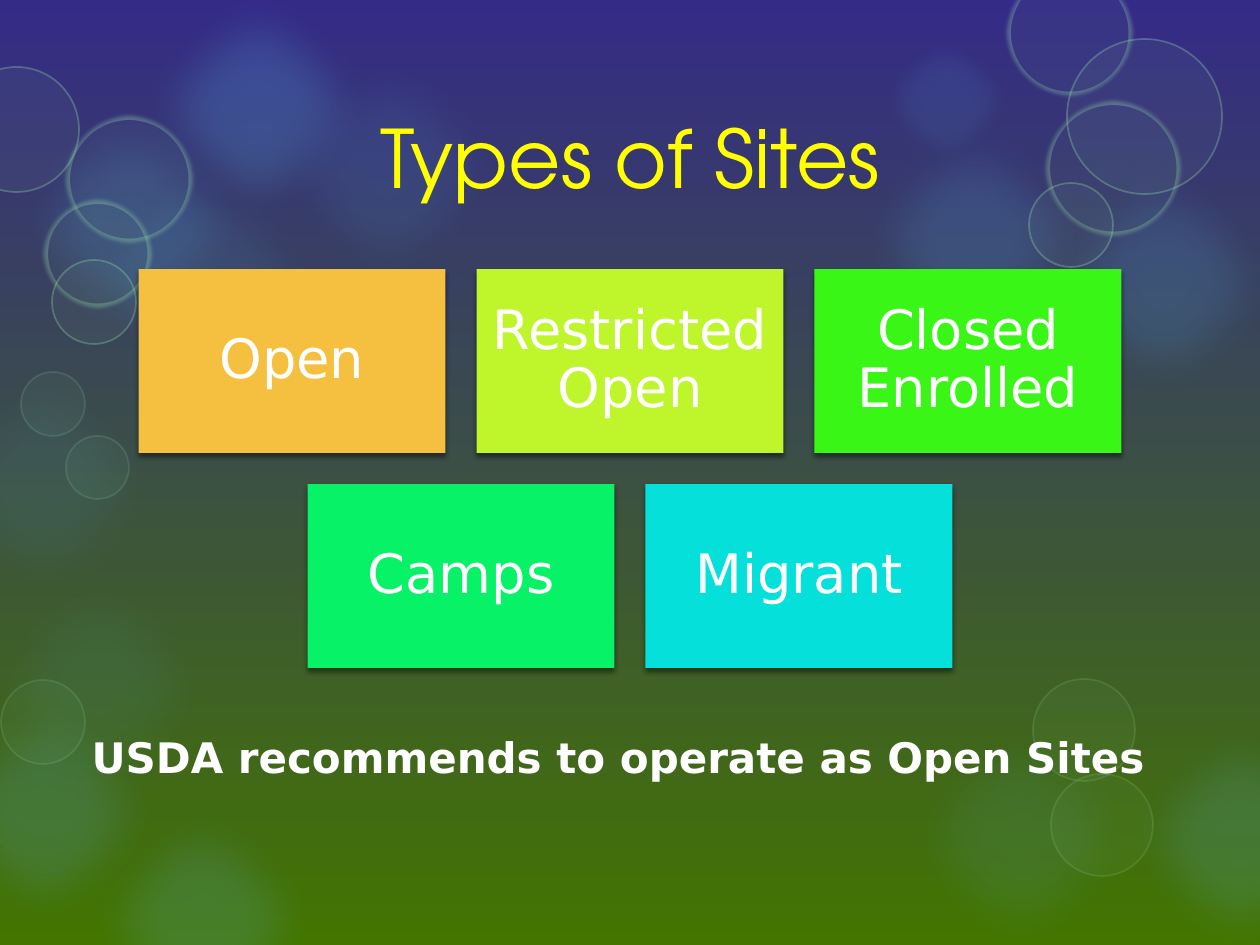
from lxml import etree
from pptx import Presentation
from pptx import util as u
from pptx.dml.color import RGBColor
from pptx.enum import shapes, text
from pptx.oxml import ns

WIDE, HIGH = 1260, 945
INDIGO = RGBColor(0x34, 0x2B, 0x87)
GREEN = RGBColor(0x43, 0x75, 0x00)
BLUE = RGBColor(0x5B, 0xBA, 0xF6)
MINT = RGBColor(0x9D, 0xE3, 0xAE)
YELLOW = RGBColor(0xFF, 0xFF, 0x00)
WHITE = RGBColor(0xFF, 0xFF, 0xFF)
HEAD, BODY = "TeX Gyre Adventor", "DejaVu Sans"

TILES = [
    [("Open", RGBColor(0xF5, 0xC0, 0x40)),
     ("Restricted Open", RGBColor(0xBE, 0xF6, 0x2B)),
     ("Closed Enrolled", RGBColor(0x3A, 0xF6, 0x17))],
    [("Camps", RGBColor(0x07, 0xF2, 0x67)),
     ("Migrant", RGBColor(0x05, 0xE0, 0xDB))],
]

GLOWS = [
    (-32, 557, 8), (72, 151, 10), (258, 39, 10), (72, 790, 16),
    (127, -23, 20), (0, 91, 15), (1033, 151, 15), (1110, 708, 16),
    (-86, 682, 16), (843, 108, 15), (890, 708, 10), (-88, 355, 8),
]
HAZE = [(874, 29, 144), (994, 282, 144)]
RINGS = {
    (1, 15): [(1, 680, 84), (1051, 774, 102), (1033, 679, 102),
              (21, 372, 64), (66, 436, 63)],
    (1, 30): [(-46, 67, 125), (52, 260, 84), (1067, 39, 155),
              (1029, 183, 84)],
    (5, 30): [(66, 116, 126), (44, 200, 107), (1007, -30, 125),
              (1046, 101, 134)],
}


def px(n):
    return u.Emu(round(n * 914400 / 126))


def effect(shape, tag, **attrs):
    shape.shadow.inherit = False
    group = shape._element.spPr.find(ns.qn("a:effectLst"))
    return etree.SubElement(group, ns.qn(tag), {k: str(v) for k, v in attrs.items()})


def circle(slide, left, top, size, color, alpha, line=None, soft=0):
    shape = slide.shapes.add_shape(
        shapes.MSO_SHAPE.OVAL, px(left), px(top), px(size), px(size))
    shape.fill.solid()
    shape.fill.fore_color.rgb = color
    alphas = [alpha]
    if line:
        width, fade = line
        shape.line.color.rgb = color
        shape.line.width = u.Pt(width)
        alphas.append(fade)
    else:
        shape.line.fill.background()
    for node, part in zip(shape._element.spPr.iter(ns.qn("a:srgbClr")), alphas):
        etree.SubElement(node, ns.qn("a:alpha"), val=str(part * 1000))
    shape.shadow.inherit = False
    if soft:
        effect(shape, "a:softEdge", rad=u.Pt(soft))


def backdrop(slide):
    fill = slide.background.fill
    fill.gradient()
    fill.gradient_angle = 270
    for stop, color, spot in zip(fill.gradient_stops, (INDIGO, GREEN), (0, 1)):
        stop.color.rgb = color
        stop.position = spot
    for left, top, alpha in GLOWS:
        circle(slide, left, top, 263, BLUE, alpha, soft=25)
    for spot in HAZE:
        circle(slide, *spot, BLUE, 10, soft=12)
    for (width, fade), spots in RINGS.items():
        for spot in spots:
            circle(slide, *spot, MINT, 5, (width, fade), 2.5 if width > 1 else 0)


def write(shape, words, size, font, color, bold=False):
    frame = shape.text_frame
    frame.word_wrap = True
    para = frame.paragraphs[0]
    para.alignment = text.PP_ALIGN.CENTER
    run = para.add_run()
    run.text = words
    run.font.size = u.Pt(size)
    run.font.name = font
    run.font.color.rgb = color
    run.font.bold = bold
    return frame


def heading(slide, box):
    title = slide.shapes.title
    title.left, title.top, title.width, title.height = map(px, box)
    slide.shapes._spTree.append(title._element)
    frame = write(title, "Types of Sites", 46, HEAD, YELLOW)
    frame.vertical_anchor = text.MSO_ANCHOR.MIDDLE


def tile(slide, box, words, color):
    shape = slide.shapes.add_shape(shapes.MSO_SHAPE.RECTANGLE, *map(px, box))
    shape.fill.solid()
    shape.fill.fore_color.rgb = color
    shape.line.fill.background()
    shade = effect(shape, "a:outerShdw", blurRad=u.Pt(3), dist=u.Pt(2), dir=5400000, rotWithShape=0)
    black = etree.SubElement(shade, ns.qn("a:srgbClr"), val="000000")
    etree.SubElement(black, ns.qn("a:alpha"), val="45000")
    frame = write(shape, words, 31, BODY, WHITE)
    frame.vertical_anchor = text.MSO_ANCHOR.MIDDLE
    frame.margin_left = frame.margin_right = px(16)
    frame.margin_top = frame.margin_bottom = px(16)
    frame.paragraphs[0].line_spacing = 0.9


def grid(slide, left, top, width):
    wide, high, gap = 307, 184, 31
    for i, row in enumerate(TILES):
        span = len(row) * (wide + gap) - gap
        start = left + (width - span) / 2
        for j, (words, color) in enumerate(row):
            box = (start + j * (wide + gap), top + i * (high + gap), wide, high)
            tile(slide, box, words, color)


def footer(slide, box):
    note = slide.shapes.add_textbox(*map(px, box))
    frame = write(note, "USDA recommends to operate as Open Sites ", 24, BODY, WHITE, True)
    frame.auto_size = text.MSO_AUTO_SIZE.SHAPE_TO_FIT_TEXT


def main():
    deck = Presentation()
    deck.slide_width, deck.slide_height = px(WIDE), px(HIGH)
    slide = deck.slides.add_slide(deck.slide_layouts[5])
    backdrop(slide)
    heading(slide, (139, 93, 982, 127))
    grid(slide, 139, 269, 982)
    footer(slide, (32, 725, 1187, 123))
    deck.save("out.pptx")


if __name__ == "__main__":
    main()
